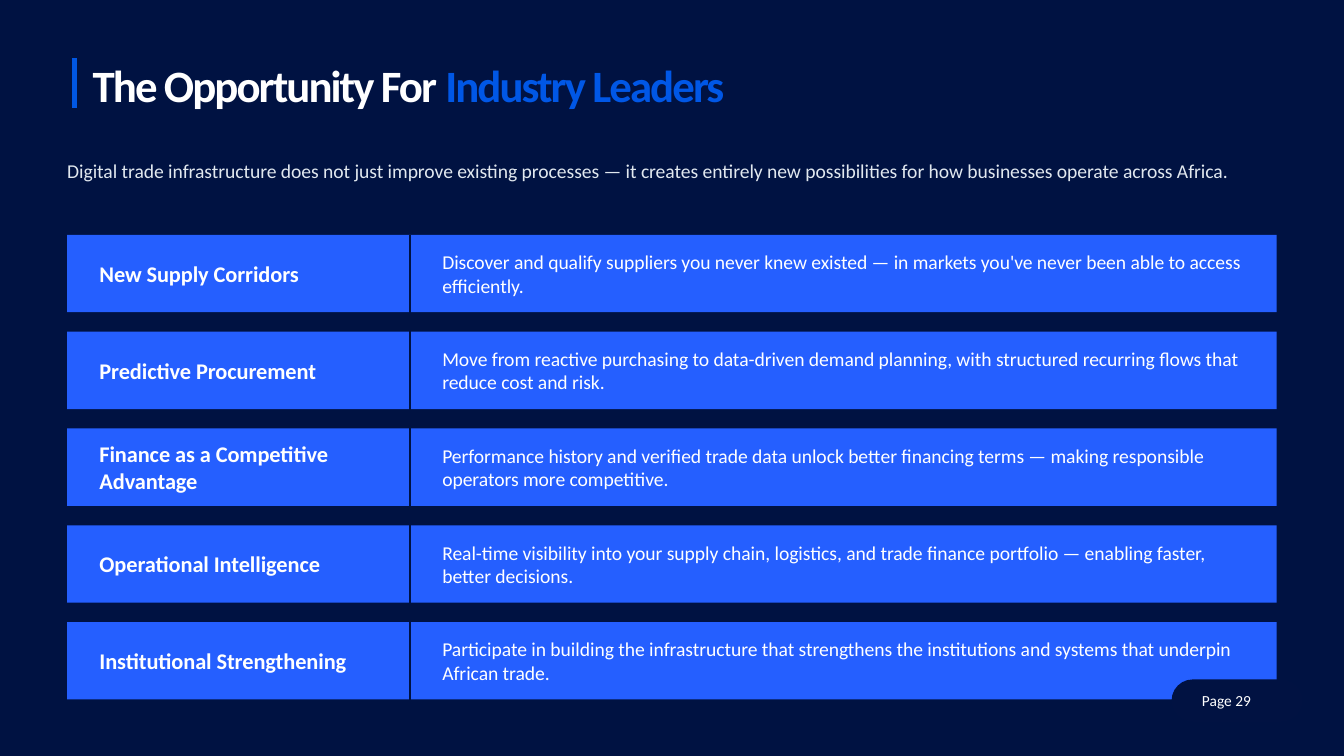
import pptx
import pptx.util
import pptx.dml.color
import pptx.enum.shapes
import pptx.enum.text
import lxml.etree

W, H = 13.33, 7.5
MARGIN = W * 0.05
COLORS = {"navy": "001242", "pill": "011242", "row": "255FFF", "accent": "0057E6",
          "bar": "0057E4", "mist": "E1E8EF", "white": "FFFFFF"}
OPPORTUNITIES = [
    ("New Supply Corridors",
     "Discover and qualify suppliers you never knew existed — in markets you've never been able to access efficiently."),
    ("Predictive Procurement",
     "Move from reactive purchasing to data-driven demand planning, with structured recurring flows that reduce cost and risk."),
    ("Finance as a Competitive Advantage",
     "Performance history and verified trade data unlock better financing terms — making responsible operators more competitive."),
    ("Operational Intelligence",
     "Real-time visibility into your supply chain, logistics, and trade finance portfolio — enabling faster,\nbetter decisions."),
    ("Institutional Strengthening",
     "Participate in building the infrastructure that strengthens the institutions and systems that underpin African trade."),
]


def inches(*values):
    """Convert numbers to inch lengths."""
    return [pptx.util.Inches(v) for v in values]


def rgb(name):
    """Look up a named colour."""
    return pptx.dml.color.RGBColor.from_string(COLORS[name])


def add_block(s, box, color, kind=pptx.enum.shapes.MSO_SHAPE.RECTANGLE):
    """Draw a filled shape without outline or shadow."""
    sp = s.shapes.add_shape(kind, *inches(*box))
    sp.shadow.inherit = False
    sp.fill.solid()
    sp.fill.fore_color.rgb = rgb(color)
    sp.line.fill.background()
    return sp


def add_rule(s, x, top, bottom, color, width):
    """Draw a vertical line."""
    c = s.shapes.add_connector(pptx.enum.shapes.MSO_CONNECTOR.STRAIGHT, *inches(x, top, x, bottom))
    c.line.color.rgb = rgb(color)
    c.line.width = pptx.util.Pt(width)
    lxml.etree.SubElement(c._element.spPr, pptx.oxml.ns.qn("a:effectLst"))


def write(sp, runs, size, bold=False, spacing=0, inset=0):
    """Fill a shape with vertically centred text from (text, colour) runs."""
    tf = sp.text_frame
    tf.word_wrap = True
    tf.margin_left, tf.margin_top, tf.margin_right, tf.margin_bottom = inches(inset, 0, 0, 0)
    tf.vertical_anchor = pptx.enum.text.MSO_ANCHOR.MIDDLE
    p = tf.paragraphs[0]
    for text, color in runs:
        for i, line in enumerate(text.split("\n")):
            p = tf.add_paragraph() if i else p
            r = p.add_run()
            r.text = line
            r.font.color.rgb = rgb(color)
            if spacing:
                r._r.get_or_add_rPr().set("spc", str(spacing))
    for p in tf.paragraphs:
        p.alignment = pptx.enum.text.PP_ALIGN.LEFT
        p.font.name = "Calibri"
        p.font.size = pptx.util.Pt(size)
        p.font.bold = bold


def add_text(s, box, runs, size, **style):
    """Place a text box."""
    write(s.shapes.add_textbox(*inches(*box)), runs, size, **style)


def add_heading(s, box):
    """Place the title with its accent bar."""
    x, y, w, h = box
    add_rule(s, x, y, y + h, "bar", 3)
    add_text(s, (x + 0.18, y - 0.1, w - 0.18, h + 0.22),
             [("The Opportunity For ", "white"), ("Industry Leaders", "accent")],
             32, bold=True, spacing=-140)


def add_opportunity(s, box, label, detail):
    """Place one row with its label and detail."""
    x, y, w, h = box
    add_block(s, box, "row")
    add_text(s, (x + 0.32, y, 2.8, h), [(label, "white")], 16, bold=True, spacing=-5)
    add_text(s, (x + 3.72, y, 8.05, h), [(detail, "white")], 14, spacing=-5)


def add_opportunities(s, box):
    """Stack the rows evenly and split their two columns."""
    x, y, w, h = box
    pitch = h / (len(OPPORTUNITIES) - 0.2)
    for i, (label, detail) in enumerate(OPPORTUNITIES):
        add_opportunity(s, (x, y + i * pitch, w, pitch * 0.8), label, detail)
    add_rule(s, x + 3.4, y, y + h + 0.19, "navy", 2)


def add_page_number(s, box):
    """Place the page number pill."""
    sp = add_block(s, box, "pill", pptx.enum.shapes.MSO_SHAPE.ROUNDED_RECTANGLE)
    sp.adjustments[0] = 0.5
    write(sp, [("Page 29", "white")], 11, inset=0.24)


def main():
    """Build the slide and save it."""
    prs = pptx.Presentation()
    prs.slide_width, prs.slide_height = inches(W, H)
    s = prs.slides.add_slide(prs.slide_layouts[6])
    s.background.fill.solid()
    s.background.fill.fore_color.rgb = rgb("navy")
    add_heading(s, (0.74, 0.58, 11.75, 0.49))
    add_text(s, (MARGIN, 1.55, W - 2 * MARGIN, 0.28),
             [("Digital trade infrastructure does not just improve existing processes — it creates "
               "entirely new possibilities for how businesses operate across Africa.", "mist")],
             14, spacing=-5)
    add_opportunities(s, (MARGIN, 2.33, W - 2 * MARGIN, 4.61))
    add_page_number(s, (11.62, 6.74, 1.3, 0.42))
    prs.save("out.pptx")


if __name__ == "__main__":
    main()
